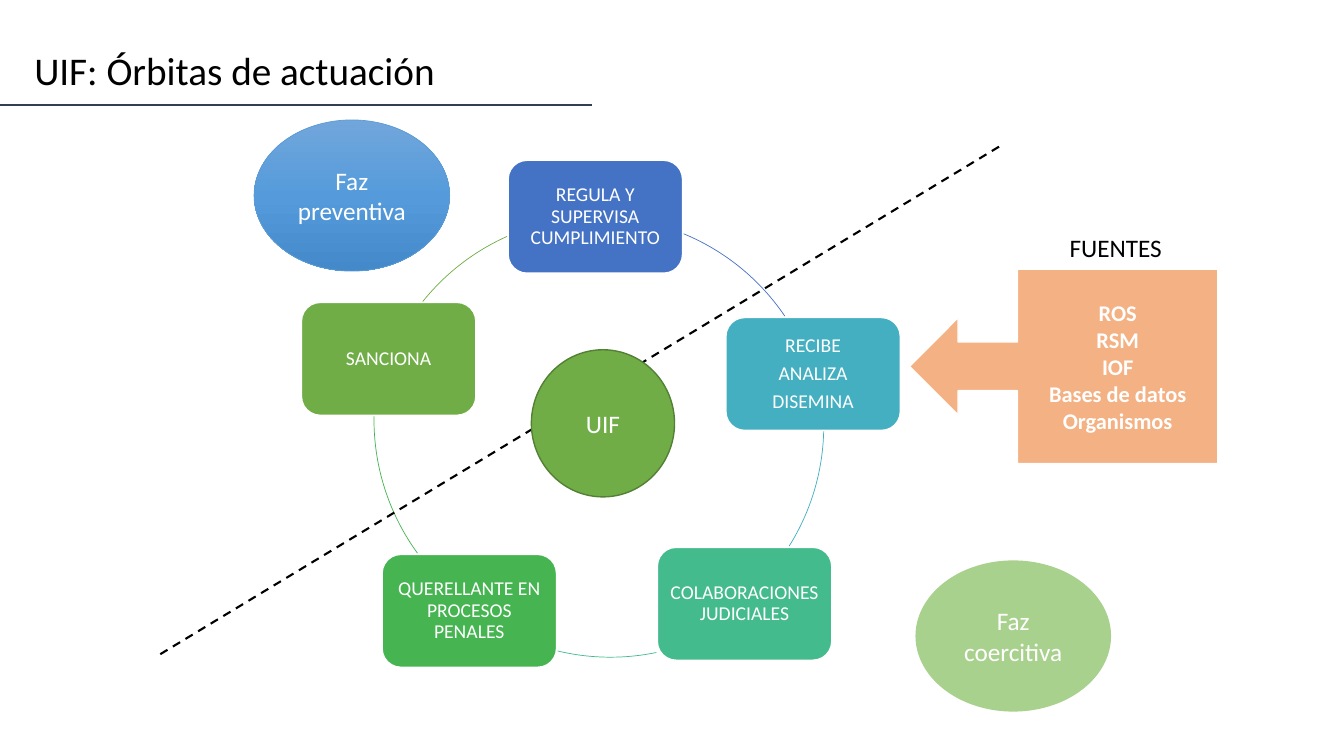
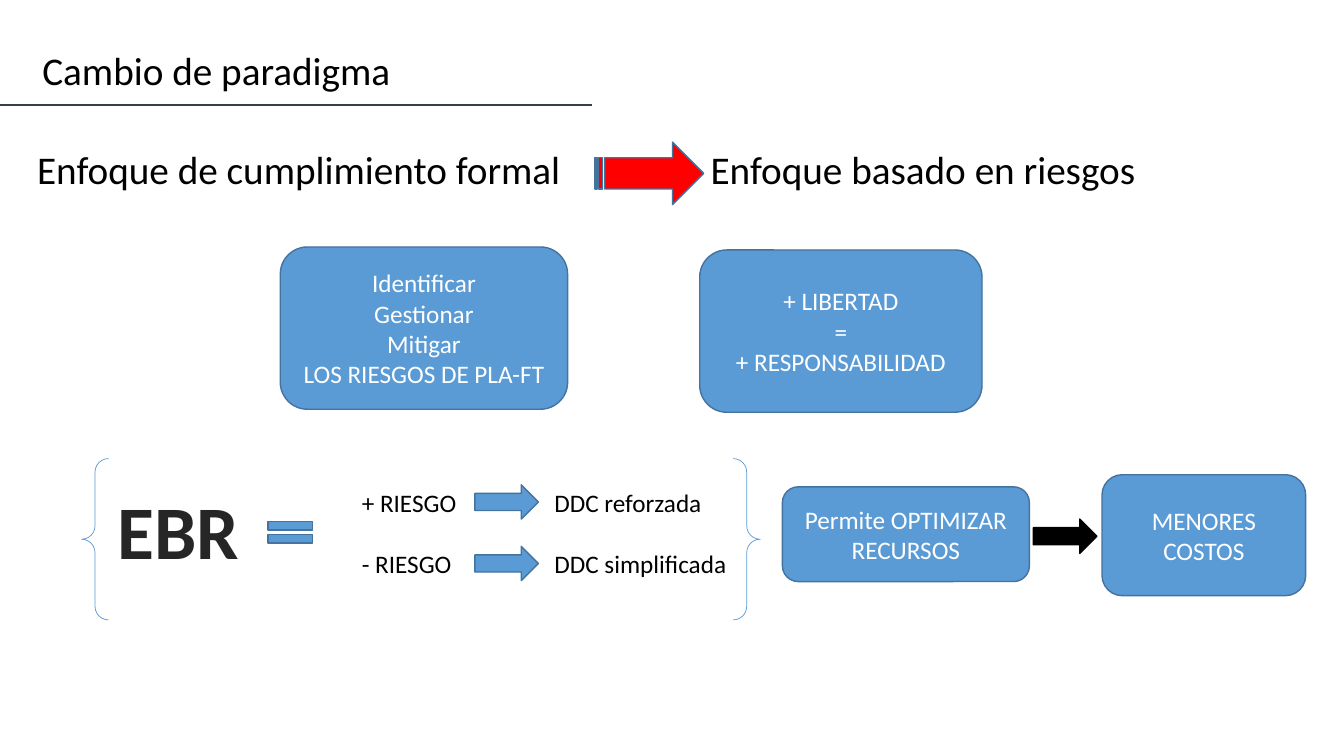
from copy import deepcopy
from pptx import Presentation
from pptx import util as u
from pptx.dml.color import RGBColor
from pptx.enum import dml, shapes, text
from pptx.oxml.ns import qn
from pptx.oxml.xmlchemy import OxmlElement

BLACK = RGBColor(0x00, 0x00, 0x00)
WHITE = RGBColor(0xFF, 0xFF, 0xFF)
SLATE = RGBColor(0x33, 0x3F, 0x50)
DARK = RGBColor(0x26, 0x26, 0x26)
BLUE = RGBColor(0x5B, 0x9B, 0xD5)
NAVY = RGBColor(0x43, 0x73, 0x9E)
RED = RGBColor(0xFF, 0x00, 0x00)
ROYAL = RGBColor(0x44, 0x72, 0xC4)
TEAL = RGBColor(0x43, 0xAF, 0xC0)
MINT = RGBColor(0x43, 0xBB, 0x8D)
LEAF = RGBColor(0x45, 0xB4, 0x51)
GREEN = RGBColor(0x70, 0xAD, 0x47)
MOSS = RGBColor(0x53, 0x80, 0x35)
LIME = RGBColor(0xA9, 0xD1, 0x8E)
PEACH = RGBColor(0xF4, 0xB1, 0x83)
SHADES = [RGBColor(0x71, 0xA6, 0xDB), RGBColor(0x55, 0x9B, 0xDB), RGBColor(0x44, 0x8A, 0xCA)]

FONT = "Calibri"
CELL = u.Inches(0.1)  # square grid: 133.3 columns by 75 rows
COLS, ROWS = 133.3, 75
KIND = shapes.MSO_SHAPE
ALIGN = text.PP_ALIGN
MID = text.MSO_ANCHOR.MIDDLE


def put(page, kind, at, words="", fill=None, edge=None, width=1, size=18,
        color=WHITE, bold=False, align=ALIGN.CENTER, lead=1, gap=0, pad=1):
    """Add a shape, or a text box if kind is None; at, pad are in grid cells."""
    spot = [int(n * CELL) for n in at]
    if kind is None:
        item = page.shapes.add_textbox(*spot)
    else:
        item = page.shapes.add_shape(kind, *spot)
        item.shadow.inherit = False
        if fill is None:
            item.fill.background()
        else:
            item.fill.solid()
            item.fill.fore_color.rgb = fill
        if edge is None:
            item.line.fill.background()
        else:
            item.line.color.rgb = edge
            item.line.width = u.Pt(width)
    if words:
        frame = item.text_frame
        frame.word_wrap = True
        frame.vertical_anchor = MID
        frame.margin_left = frame.margin_right = int(pad * CELL)
        frame.margin_top = frame.margin_bottom = int(min(pad, 0.5) * CELL)
        frame.text = words
        look = {"name": FONT, "size": u.Pt(size), "bold": bold}
        for para in frame.paragraphs:
            para.alignment, para.line_spacing = align, lead
            para.space_after = u.Pt(gap)
            for key, value in look.items():
                setattr(para.font, key, value)
            para.font.color.rgb = color
    return item


def rule(page, ends, color, width):
    """Add a straight line between two grid points."""
    line = page.shapes.add_connector(
        shapes.MSO_CONNECTOR.STRAIGHT, *[int(n * CELL) for n in ends])
    line.line.color.rgb = color
    line.line.width = u.Pt(width)
    line._element.spPr.append(OxmlElement("a:effectLst"))
    return line


deck = Presentation()
deck.slide_width, deck.slide_height = int(COLS * CELL), ROWS * CELL

# Titles and the line below them
pages = []
for words, left, wide in [("UIF: Órbitas de actuación", 2.4, 115),
                          ("Cambio de paradigma", 3.2, 59.6)]:
    page = deck.slides.add_slide(deck.slide_layouts[5])
    title = page.shapes.title
    title.left, title.top = int(left * CELL), 0
    title.width, title.height = int(wide * CELL), int(14.5 * CELL)
    title.text_frame.text = words
    title.text_frame.vertical_anchor = MID
    para = title.text_frame.paragraphs[0]
    para.alignment, para.line_spacing = ALIGN.LEFT, 0.9
    para.font.name, para.font.size = FONT, u.Pt(28)
    para.font.color.rgb = BLACK
    rule(page, (0, 10.4, 58.7, 10.4), SLATE, 1)
    pages.append(page)
orbit, shift = pages

# Slide 1: cycle of boxes, each followed by an arc (left, top, from, to degrees)
RING = 44.9
cycle = [
    ("REGULA Y SUPERVISA CUMPLIMIENTO", 50.4, 15.9, ROYAL, (36.8, 21.5, 292.4, 325.9)),
    ("RECIBE\nANALIZA\nDISEMINA", 72, 31.5, TEAL, (36.8, 19.8, 1.4, 32.1)),
    ("COLABORACIONES JUDICIALES", 65.2, 54.3, MINT, (38.1, 20.3, 78.3, 103.5)),
    ("QUERELLANTE EN PROCESOS PENALES", 37.9, 55, LEAF, (37.1, 19.2, 143.9, 180.9)),
    ("SANCIONA", 29.9, 30, GREEN, (37, 21.5, 218.7, 245.9)),
]
for words, left, top, color, (x, y, start, end) in cycle:
    put(orbit, KIND.ROUNDED_RECTANGLE, (left, top, 17.3, 11.2), words, color,
        WHITE, size=14, lead=0.9, gap=5, pad=0.6)
    arc = put(orbit, KIND.ARC, (x, y, RING, RING), edge=color, width=0.5)
    for i, turn in enumerate((start, end)):
        arc.adjustments[i] = turn * 0.6  # 60000 units a degree, in 100000ths

face = put(orbit, KIND.OVAL, (25.2, 11.9, 19.4, 15), "Faz preventiva", BLUE, BLUE, 0.5)
face.fill.gradient()
face.fill.gradient_angle = 270
stops = next(face._element.spPr.iter(qn("a:gsLst")))
stops.insert(1, deepcopy(stops[0]))
for i, (stop, shade) in enumerate(zip(face.fill.gradient_stops, SHADES)):
    stop.color.rgb = shade
    stop.position = i / 2

put(orbit, KIND.OVAL, (90.8, 55.6, 19.4, 15), "Faz coercitiva", LIME)
put(orbit, KIND.LEFT_ARROW_CALLOUT, (90.2, 26.7, 30.6, 19.3),
    "ROS\nRSM\nIOF\nBases de datos\nOrganismos", PEACH, WHITE, size=16, bold=True)
put(orbit, None, (105.1, 22.6, 12.5, 4), "FUENTES", color=BLACK, align=ALIGN.LEFT)
split = rule(orbit, (15.9, 64.9, 99.5, 14.3), BLACK, 1.5)
split.line.dash_style = dml.MSO_LINE.DASH
put(orbit, KIND.OVAL, (52.7, 34.7, 14.2, 14.6), "UIF", GREEN, MOSS)

# Slide 2: the two approaches
for words, left in [("Enfoque de cumplimiento formal", 2.7),
                    ("Enfoque basado en riesgos", 69.5)]:
    put(shift, None, (left, 14.4, 56, 5.2), words, size=28, color=BLACK,
        align=ALIGN.LEFT, lead=0.9)

boxes = [
    (KIND.FLOWCHART_ALTERNATE_PROCESS, (27.8, 24.5, 28.5, 16.1),
     "Identificar\nGestionar\nMitigar\nLOS RIESGOS DE PLA-FT"),
    (KIND.FLOWCHART_ALTERNATE_PROCESS, (69.4, 24.8, 28, 16.1),
     "+ LIBERTAD\n=\n+ RESPONSABILIDAD"),
    (KIND.ROUNDED_RECTANGLE, (77.6, 48.3, 24.5, 9.4), "Permite OPTIMIZAR RECURSOS"),
    (KIND.ROUNDED_RECTANGLE, (109.3, 47.1, 20.2, 12), "MENORES COSTOS"),
    (KIND.MATH_EQUAL, (25.8, 51, 6, 3.6), ""),
]
for kind, at, words in boxes:
    put(shift, kind, at, words, BLUE, NAVY)

put(shift, KIND.STRIPED_RIGHT_ARROW, (59, 14.1, 10.8, 6.2), fill=RED, edge=NAVY)
put(shift, KIND.RIGHT_ARROW, (102.5, 51.5, 6.3, 3.4), fill=BLACK, edge=BLACK)
put(shift, KIND.DOUBLE_BRACE, (8.1, 45.5, 67.3, 16), edge=BLUE, width=0.5)
put(shift, None, (9.5, 47.5, 16.4, 10.1), "EBR", size=54, color=DARK, bold=True)

# Risk level, arrow and the diligence it calls for
for row, (risk, care) in enumerate([("+ RIESGO", "DDC reforzada"),
                                    ("- RIESGO", "DDC simplificada")]):
    top = 47.8 + row * 6.1
    for words, left, wide in [(risk, 34.9, 12), (care, 54, 20)]:
        put(shift, None, (left, top, wide, 4), words, color=BLACK, align=ALIGN.LEFT)
    put(shift, KIND.RIGHT_ARROW, (47.1, top + 0.3, 6.3, 3.4), fill=BLUE, edge=NAVY)

deck.save("out.pptx")
